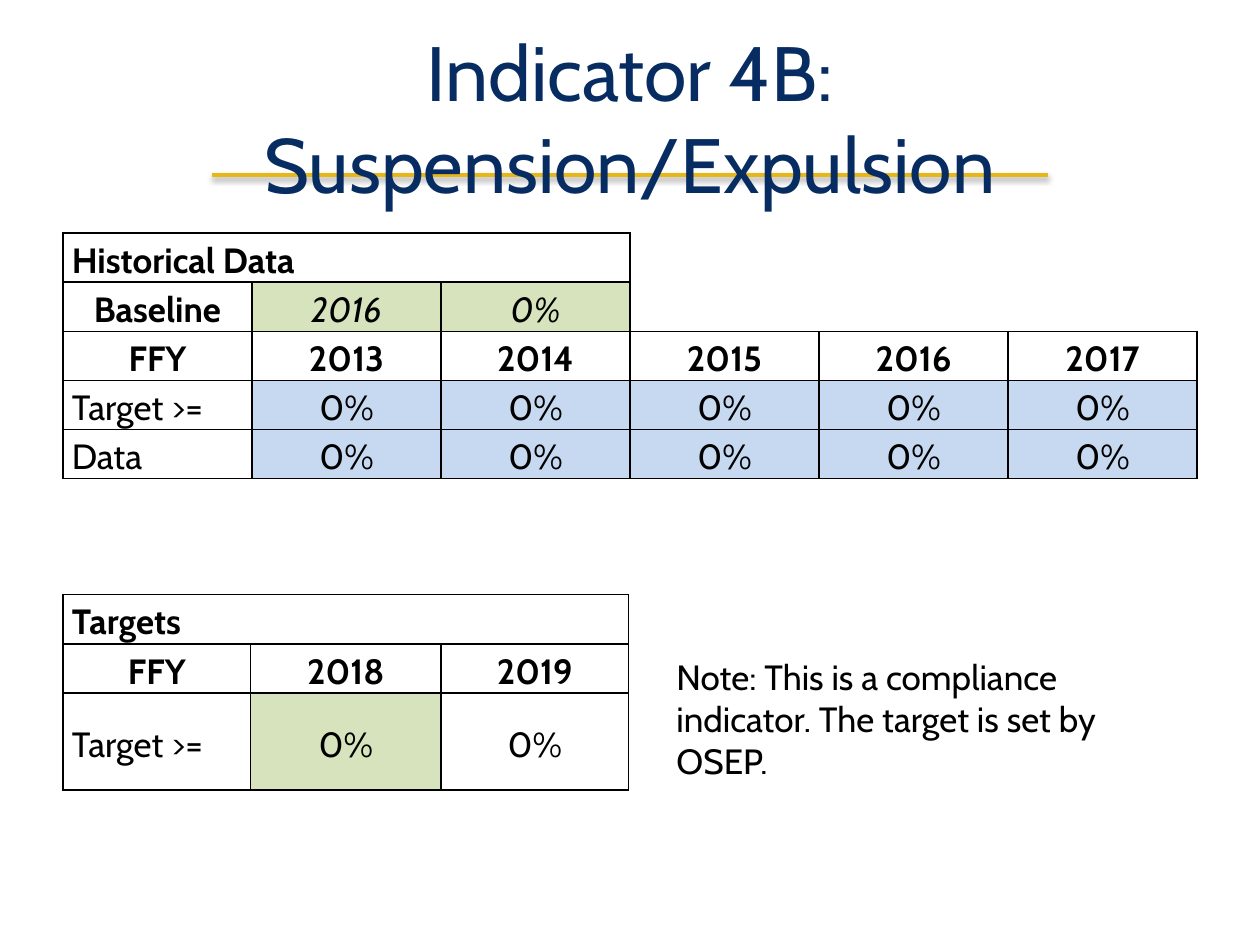
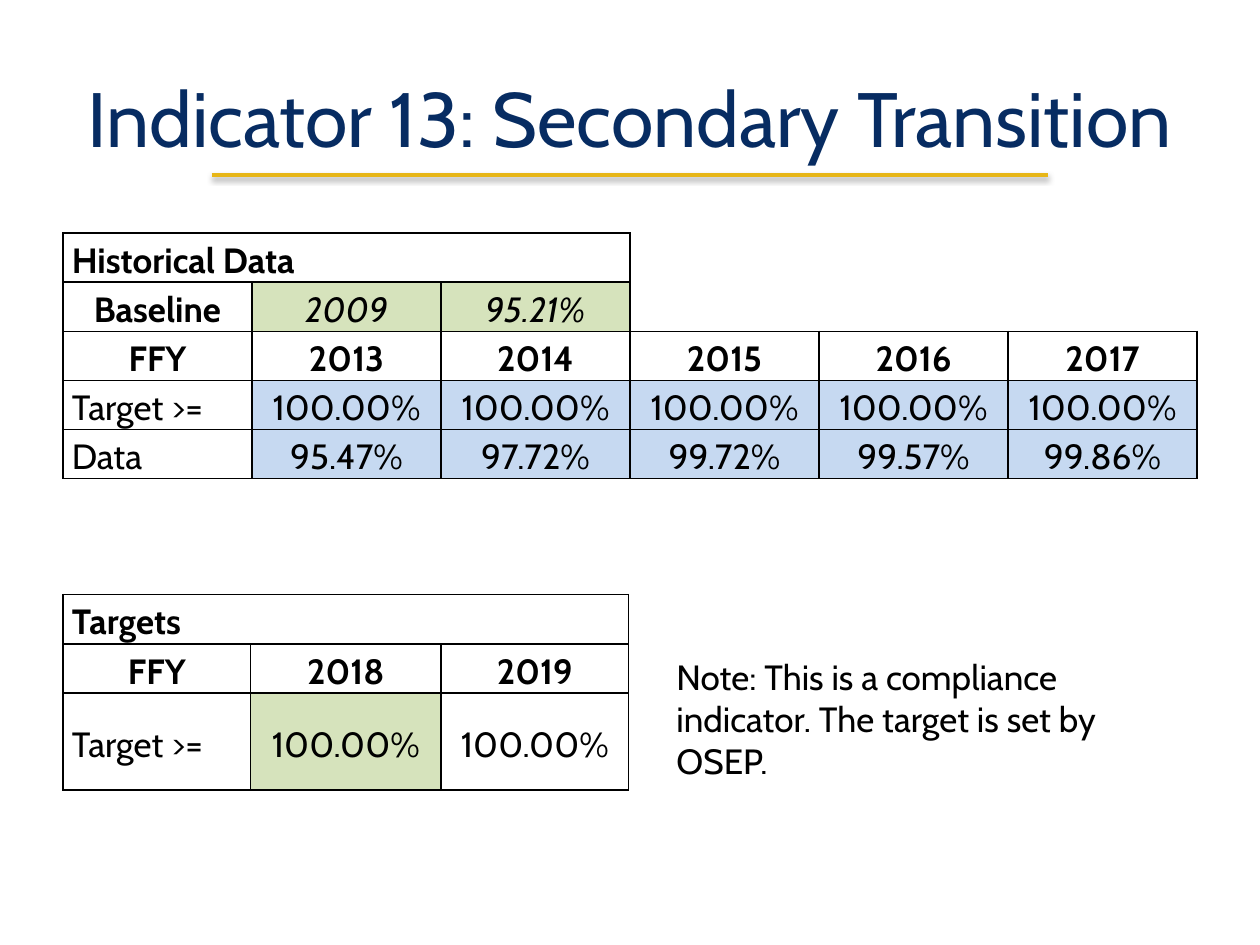
"""Build two slides of indicator history and targets."""
from dataclasses import dataclass

from lxml import etree
from pptx import Presentation
from pptx.dml.color import RGBColor
from pptx.enum.shapes import MSO_CONNECTOR
from pptx.enum.text import MSO_ANCHOR, MSO_AUTO_SIZE, PP_ALIGN
from pptx.oxml import parse_xml
from pptx.oxml.ns import nsdecls, qn
from pptx.slide import Slide, SlideLayout
from pptx.table import Table, _Cell
from pptx.text.text import _Paragraph
from pptx.util import Inches, Pt

STRAIGHT = MSO_CONNECTOR.STRAIGHT
TOP, MIDDLE, BOTTOM = MSO_ANCHOR.TOP, MSO_ANCHOR.MIDDLE, MSO_ANCHOR.BOTTOM
LEFT, CENTER = PP_ALIGN.LEFT, PP_ALIGN.CENTER
NO_FIT, GROW = MSO_AUTO_SIZE.NONE, MSO_AUTO_SIZE.SHAPE_TO_FIT_TEXT

COLOURS = {
    "title": "072C62",
    "rule": "E7B617",
    "text": "000000",
    "green": "D6E3BC",
    "blue": "C6D9F1",
}
FONT = "Cabin"
TITLE_ONLY = 5
ROW_HEIGHT = 0.39
ALL_SIDES = "LRTB"
YEARS = ["2013", "2014", "2015", "2016", "2017"]
TARGET_YEARS = ["2018", "2019"]
NOTE = "Note: This is a compliance indicator. The target is set by OSEP."


@dataclass(frozen=True)
class CellStyle:
    """Look of one table cell."""

    bold: bool = False
    italic: bool = False
    align: PP_ALIGN = CENTER
    anchor: MSO_ANCHOR = MIDDLE
    fill: str = ""
    sides: str = ALL_SIDES


@dataclass(frozen=True)
class Indicator:
    """Content of one indicator slide."""

    title: str
    baseline: tuple[str, str]
    target: str
    data: list[str]


HEADING = CellStyle(bold=True, align=LEFT)
COLUMN_HEAD = CellStyle(bold=True)
TOP_HEAD = CellStyle(bold=True, anchor=TOP)
LABEL = CellStyle(align=LEFT)
TOP_LABEL = CellStyle(align=LEFT, anchor=TOP)
BASELINE = CellStyle(italic=True, fill="green")
HISTORY = CellStyle(fill="blue")
CHOSEN = CellStyle(fill="green")
PLAIN = CellStyle()
EMPTY = CellStyle(sides="LB")

Entry = tuple[str, CellStyle]

INDICATORS = [
    Indicator("Indicator 4B: Suspension/Expulsion", ("2016", "0%"), "0%", ["0%"] * 5),
    Indicator(
        "Indicator 13: Secondary Transition",
        ("2009", "95.21%"),
        "100.00%",
        ["95.47%", "97.72%", "99.72%", "99.57%", "99.86%"],
    ),
]


def colour(name: str) -> RGBColor:
    """Return a named colour."""
    return RGBColor.from_string(COLOURS[name])


def format_text(
    para: _Paragraph, size: float, ink: str = "text", bold: bool = False, italic: bool = False
) -> None:
    """Set the font of every run in a paragraph."""
    for span in para.runs:
        span.font.name = FONT
        span.font.size = Pt(size)
        span.font.bold = bold
        span.font.italic = italic
        span.font.color.rgb = colour(ink)


def set_borders(cell: _Cell, sides: str) -> None:
    """Draw the named sides of a cell and clear the others."""
    properties = cell._tc.get_or_add_tcPr()
    for side in ALL_SIDES:
        border = etree.SubElement(properties, qn(f"a:ln{side}"), w=str(Pt(1)))
        if side in sides:
            fill = etree.SubElement(border, qn("a:solidFill"))
            etree.SubElement(fill, qn("a:srgbClr"), val=COLOURS["text"])
        else:
            etree.SubElement(border, qn("a:noFill"))


def fill_cell(cell: _Cell, text: str, style: CellStyle) -> None:
    """Write and format one cell."""
    set_borders(cell, style.sides)
    if style.fill:
        cell.fill.solid()
        cell.fill.fore_color.rgb = colour(style.fill)
    else:
        cell.fill.background()
    cell.margin_left = cell.margin_right = Inches(0.07)
    cell.margin_top = cell.margin_bottom = 0
    cell.vertical_anchor = style.anchor
    if text:
        para = cell.text_frame.paragraphs[0]
        para.text = text
        para.alignment = style.align
        para.line_spacing = 1.15
        para.space_before = para.space_after = Pt(3)
        format_text(para, 20, bold=style.bold, italic=style.italic)


def draw_table(
    slide: Slide, top: float, widths: list[float], heights: list[float], rows: list[list[Entry]]
) -> Table:
    """Draw a table whose first three heading cells are merged."""
    table = slide.shapes.add_table(
        len(rows), len(widths), Inches(0.5), Inches(top), Inches(sum(widths)), Inches(sum(heights))
    ).table
    table.first_row = table.horz_banding = False
    for column, width in zip(table.columns, widths):
        column.width = Inches(width)
    for row, height, entries in zip(table.rows, heights, rows):
        row.height = Inches(height)
        for cell, (text, style) in zip(row.cells, entries):
            fill_cell(cell, text, style)
    table.cell(0, 0).merge(table.cell(0, 2))
    return table


def styled(texts: list[str], style: CellStyle) -> list[Entry]:
    """Pair each text with the same style."""
    return [(text, style) for text in texts]


def draw_history(slide: Slide, indicator: Indicator) -> None:
    """Draw the table of past targets and data."""
    blanks = styled([""] * 3, EMPTY)
    rows = [
        styled(["Historical Data", "", ""], HEADING) + blanks,
        [("Baseline", COLUMN_HEAD), *styled(list(indicator.baseline), BASELINE), *blanks],
        [("FFY", TOP_HEAD), *styled(YEARS, COLUMN_HEAD)],
        [("Target >=", TOP_LABEL), *styled([indicator.target] * len(YEARS), HISTORY)],
        [("Data", TOP_LABEL), *styled(indicator.data, HISTORY)],
    ]
    table = draw_table(slide, 1.85, [1.5] * 6, [ROW_HEIGHT] * 5, rows)
    table.cell(0, 3).merge(table.cell(1, 5))


def draw_targets(slide: Slide, indicator: Indicator) -> None:
    """Draw the table of coming targets."""
    rows = [
        styled(["Targets", "", ""], HEADING),
        styled(["FFY", *TARGET_YEARS], COLUMN_HEAD),
        [("Target >=", LABEL), (indicator.target, CHOSEN), (indicator.target, PLAIN)],
    ]
    draw_table(slide, 4.72, [1.49, 1.51, 1.49], [ROW_HEIGHT, ROW_HEIGHT, 0.77], rows)


def draw_title(slide: Slide, text: str) -> None:
    """Place and format the title placeholder."""
    title = slide.shapes.title
    title.left, title.top = Inches(0.5), Inches(0.3)
    title.width, title.height = Inches(9), Inches(1.25)
    frame = title.text_frame
    frame.text = text
    frame.word_wrap = True
    frame.auto_size = NO_FIT
    frame.vertical_anchor = MIDDLE
    frame.paragraphs[0].alignment = CENTER
    format_text(frame.paragraphs[0], 44, "title")


def draw_note(slide: Slide) -> None:
    """Write the note beside the targets."""
    box = slide.shapes.add_textbox(Inches(5.27), Inches(5.14), Inches(3.72), Inches(1.11))
    frame = box.text_frame
    frame.text = NOTE
    frame.word_wrap = True
    frame.auto_size = GROW
    frame.vertical_anchor = BOTTOM
    format_text(frame.paragraphs[0], 20)


def add_title_rule(slide: Slide, layout: SlideLayout) -> None:
    """Put the shadowed rule under the title on the shared layout."""
    rule = slide.shapes.add_connector(
        STRAIGHT, Inches(1.68), Inches(1.39), Inches(8.32), Inches(1.39)
    )
    rule.line.color.rgb = colour("rule")
    rule.line.width = Pt(2)
    shadow = parse_xml(
        f'<a:effectLst {nsdecls("a")}>'
        f'<a:outerShdw blurRad="{Pt(3.1)}" dist="{Pt(1.6)}" dir="5400000" rotWithShape="0">'
        f'<a:srgbClr val="{COLOURS["text"]}"><a:alpha val="38000"/></a:srgbClr>'
        "</a:outerShdw></a:effectLst>"
    )
    rule.element.spPr.append(shadow)
    layout.shapes.element.append(rule.element)


def main() -> None:
    """Build and save the deck."""
    deck = Presentation()
    deck.slide_width, deck.slide_height = Inches(10), Inches(7.5)
    layout = deck.slide_layouts[TITLE_ONLY]
    for indicator in INDICATORS:
        slide = deck.slides.add_slide(layout)
        draw_title(slide, indicator.title)
        draw_history(slide, indicator)
        draw_targets(slide, indicator)
        draw_note(slide)
    add_title_rule(deck.slides[0], layout)
    deck.save("out.pptx")


if __name__ == "__main__":
    main()
